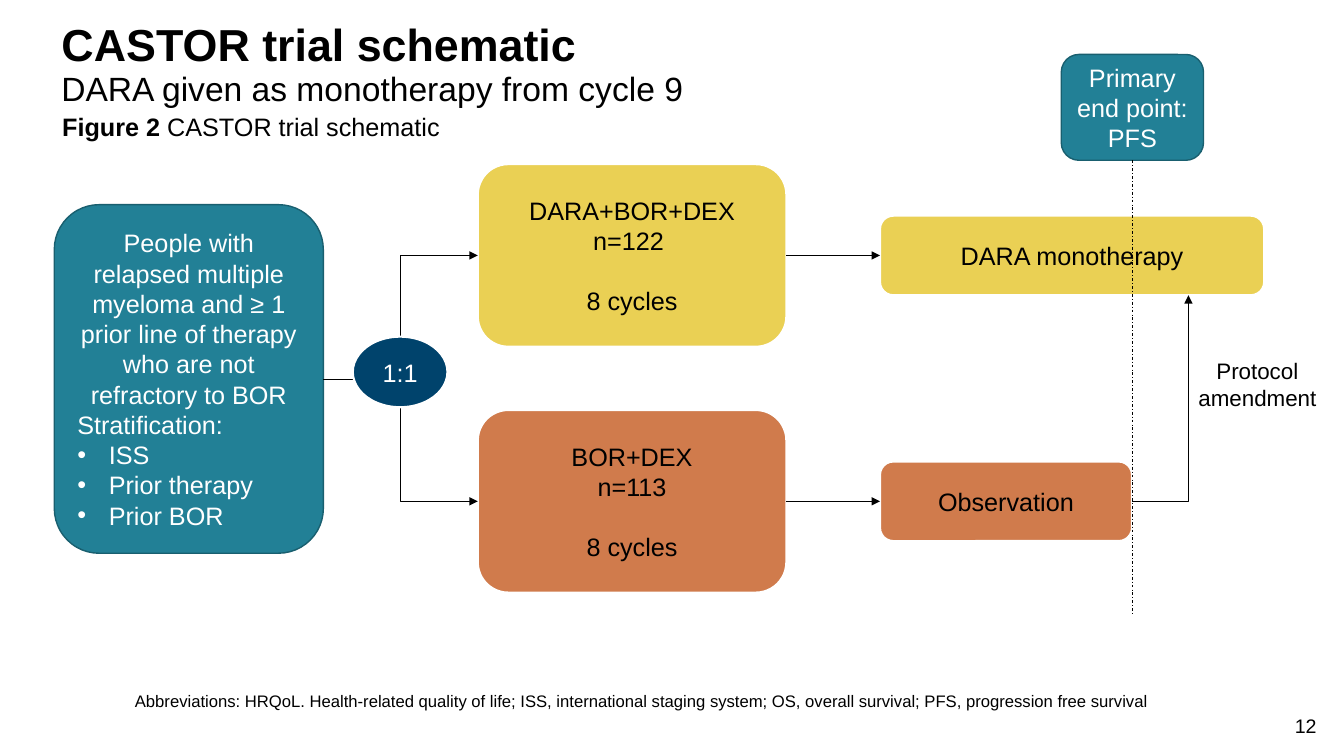
import dataclasses

import lxml.etree
import pptx
import pptx.dml.color
import pptx.enum.dml
import pptx.enum.shapes
import pptx.enum.text
import pptx.oxml.ns
import pptx.util

Pt = pptx.util.Pt
qn = pptx.oxml.ns.qn
Align = pptx.enum.text.PP_ALIGN
Anchor = pptx.enum.text.MSO_ANCHOR
Preset = pptx.enum.shapes.MSO_SHAPE
Route = pptx.enum.shapes.MSO_CONNECTOR


@dataclasses.dataclass(frozen=True)
class Theme:
    font: str = "Arial"
    black: str = "000000"
    white: str = "FFFFFF"
    teal: str = "228096"
    teal_edge: str = "195F6F"
    navy: str = "00436C"
    yellow: str = "EAD054"
    orange: str = "D07B4C"
    title: float = 32
    subtitle: float = 24
    body: float = 18
    label: float = 16
    number: float = 14
    note: float = 11.9


@dataclasses.dataclass(frozen=True)
class Para:
    text: str
    lead: str = ""
    align: Align = Align.LEFT
    bullet: bool = False
    before: float = 0
    spacing: float = 1


class Schematic:
    def __init__(self, slide, theme):
        self.slide = slide
        self.theme = theme

    def add_run(self, paragraph, text, size, colour, bold=False):
        run = paragraph.add_run()
        run.text = text
        run.font.name = self.theme.font
        run.font.size = Pt(size)
        run.font.bold = bold
        run.font.color.rgb = pptx.dml.color.RGBColor.from_string(colour)

    def fill_text(self, frame, paras, size, colour, anchor, bold=False):
        frame.word_wrap = True
        frame.vertical_anchor = anchor
        for index, para in enumerate(paras):
            paragraph = frame.add_paragraph() if index else frame.paragraphs[0]
            paragraph.alignment = para.align
            paragraph.line_spacing = para.spacing
            if para.before:
                paragraph.space_before = Pt(para.before)
            if para.bullet:
                properties = paragraph._p.get_or_add_pPr()
                properties.set("marL", str(Pt(22.5)))
                properties.set("indent", str(-Pt(22.5)))
                lxml.etree.SubElement(properties, qn("a:buFont")).set("typeface", self.theme.font)
                lxml.etree.SubElement(properties, qn("a:buChar")).set("char", "•")
            if para.lead:
                self.add_run(paragraph, para.lead, size, colour, True)
            for number, line in enumerate(para.text.split("\n")):
                if number:
                    paragraph.add_line_break()
                self.add_run(paragraph, line, size, colour, bold)

    def title(self, text, left, top, width, height):
        heading = self.slide.shapes.title
        heading.left, heading.top = Pt(left), Pt(top)
        heading.width, heading.height = Pt(width), Pt(height)
        self.fill_text(heading.text_frame, [Para(text, spacing=0.9)], self.theme.title,
                       self.theme.black, Anchor.MIDDLE, True)

    def text(self, para, left, top, width, height, size, anchor=Anchor.TOP):
        box = self.slide.shapes.add_textbox(Pt(left), Pt(top), Pt(width), Pt(height))
        self.fill_text(box.text_frame, [para], size, self.theme.black, anchor)

    def node(self, paras, left, top, width, height, fill=None, edge=None, edge_width=1.5,
             colour=None, size=None, preset=Preset.ROUNDED_RECTANGLE):
        node = self.slide.shapes.add_shape(preset, Pt(left), Pt(top), Pt(width), Pt(height))
        node.shadow.inherit = False
        if fill:
            node.fill.solid()
            node.fill.fore_color.rgb = pptx.dml.color.RGBColor.from_string(fill)
            node.line.color.rgb = pptx.dml.color.RGBColor.from_string(edge or self.theme.white)
            node.line.width = Pt(edge_width)
        else:
            node.fill.background()
            node.line.fill.background()
        self.fill_text(node.text_frame, paras, size or self.theme.body,
                       colour or self.theme.black, Anchor.MIDDLE)
        return node

    def link(self, start, end, route=Route.STRAIGHT, source=None, target=None,
             arrow=True, dash=None, corner=False):
        link = self.slide.shapes.add_connector(route, *(Pt(value) for value in start + end))
        if source:
            link.begin_connect(*source)
        if target:
            link.end_connect(*target)
        link.line.color.rgb = pptx.dml.color.RGBColor.from_string(self.theme.black)
        link.line.width = Pt(0.5)
        if dash:
            link.line.dash_style = dash
        properties = link._element.spPr
        if corner:
            properties.find(qn("a:prstGeom")).set("prst", "bentConnector2")
        if arrow:
            lxml.etree.SubElement(properties.find(qn("a:ln")), qn("a:tailEnd")).set("type", "triangle")
        lxml.etree.SubElement(properties, qn("a:effectLst"))


def centred(text, before=0):
    return Para(text, align=Align.CENTER, before=before)


def main():
    theme = Theme()
    deck = pptx.Presentation()
    deck.slide_width, deck.slide_height = Pt(960), Pt(540)
    trial = Schematic(deck.slides.add_slide(deck.slide_layouts[5]), theme)

    trial.title("CASTOR trial schematic", 36.7, 10, 885.6, 46.8)
    trial.text(Para("DARA given as monotherapy from cycle 9", spacing=0.9),
               36.7, 48, 885.6, 41, theme.subtitle)

    people_right, people_middle = 231, 270.7
    trial.node([centred("People with relapsed multiple myeloma and ≥ 1 prior line of therapy "
                        "who are not refractory to BOR"),
                Para("Stratification:")]
               + [Para(factor, bullet=True) for factor in ("ISS", "Prior therapy", "Prior BOR")],
               38.8, 146.2, 192.2, 249, theme.teal, theme.teal_edge, 1, theme.white)

    arm_left, arm_width, arm_height = 341.3, 220.4, 130.4
    next_left, next_height = 628.6, 56.8
    arms = (
        (182.5, theme.yellow, "DARA+BOR+DEX\nn=122 ", "DARA monotherapy", 274.4),
        (358.1, theme.orange, "BOR+DEX\nn=113", "Observation", 180),
    )
    for middle, fill, regimen, follow_up, width in arms:
        treatment = trial.node([centred(regimen), centred("8 cycles", 21)], arm_left,
                               middle - arm_height / 2, arm_width, arm_height, fill)
        continuation = trial.node([centred(follow_up)], next_left, middle - next_height / 2,
                                  width, next_height, fill)
        trial.link((people_right, people_middle), (arm_left, middle), Route.ELBOW)
        trial.link((arm_left + arm_width, middle), (next_left, middle),
                   source=(treatment, 3), target=(continuation, 1))

    trial.node([centred("1:1")], 252, 240.5, 67.6, 50.4, theme.navy,
               colour=theme.white, preset=Preset.OVAL)

    endpoint_middle = 808.9
    endpoint = trial.node([centred("Primary end point:\nPFS")], endpoint_middle - 50.8, 38.9,
                          101.6, 75.6, theme.teal, theme.teal_edge, 1, theme.white)
    trial.link((endpoint_middle, 114.5), (endpoint_middle, 439.2), source=(endpoint, 2),
               arrow=False, dash=pptx.enum.dml.MSO_LINE.DASH_DOT)
    trial.link((808.6, 358.1), (848.9, 210.9), Route.ELBOW, corner=True)
    trial.node([centred("Protocol amendment")], 836.6, 240.5, 123.1, 67.7, size=theme.label)

    trial.text(Para("Abbreviations: HRQoL. Health-related quality of life; ISS, international "
                    "staging system; OS, overall survival; PFS, progression free survival",
                    spacing=0.7), 89.3, 494, 739.4, 28.8, theme.note)
    trial.text(Para("CASTOR trial schematic", lead="Figure 2 "),
               37.4, 76.3, 451.4, 28.8, theme.body)
    trial.text(Para("12", align=Align.RIGHT), 910.8, 504, 36.7, 28.8, theme.number, Anchor.MIDDLE)

    deck.save("out.pptx")


if __name__ == "__main__":
    main()
